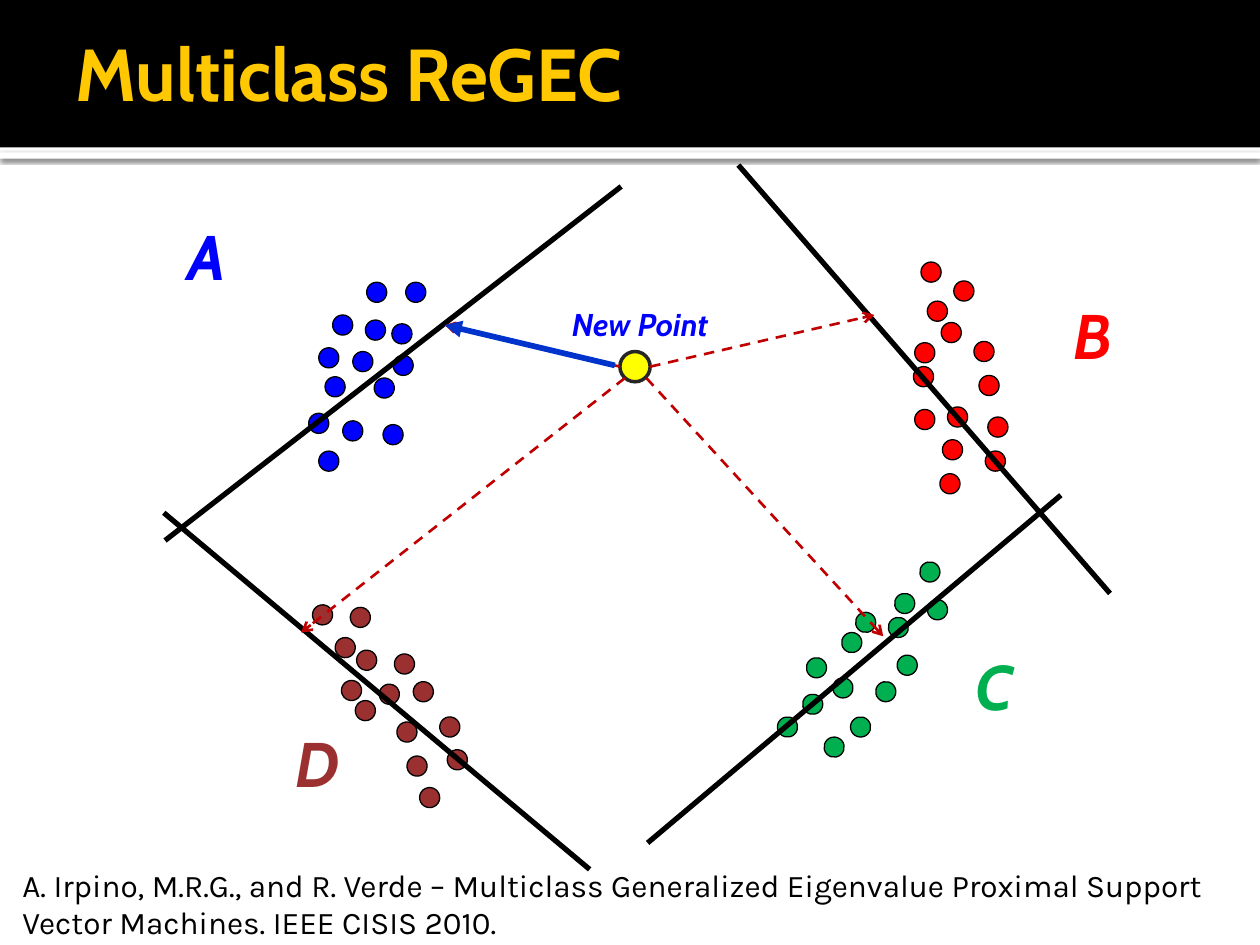
"""Build the Multiclass ReGEC slide: four point classes, their planes and a new point."""
from lxml import etree
from pptx import Presentation
from pptx.dml.color import RGBColor
from pptx.enum import dml, shapes, text
from pptx.oxml import ns, parse_xml
from pptx.util import Inches, Pt

HUES = {
    "black": "000000", "white": "FFFFFF", "gold": "FFC800", "blue": "0000FF",
    "red": "FF0000", "brown": "9A3130", "green": "00B050", "dark": "C00000",
    "yellow": "FFFF00", "gray": "262626", "royal": "0033CC",
}
RGB = {name: RGBColor.from_string(code) for name, code in HUES.items()}

deck = Presentation()
deck.slide_width, deck.slide_height = Inches(10), Inches(7.5)
slide = deck.slides.add_slide(deck.slide_layouts[6])
items = slide.shapes


def label(words, box, size, hue, font="Cabin", bold=True, slant=False, wrap=False):
    note = items.add_textbox(*map(Inches, box))
    frame = note.text_frame
    frame.word_wrap = wrap
    line = frame.paragraphs[0]
    line.text = words
    face = line.font
    face.name, face.size, face.bold, face.italic = font, Pt(size), bold, slant
    face.color.rgb = RGB[hue]
    return frame


def stroke(start, end, hue, width, head=None, dash=False):
    line = items.add_connector(
        shapes.MSO_CONNECTOR.STRAIGHT, *map(Inches, start + end))
    line.line.color.rgb = RGB[hue]
    line.line.width = Pt(width)
    if dash:
        line.line.dash_style = dml.MSO_LINE.DASH
    if head:
        etree.SubElement(line.line._get_or_add_ln(), ns.qn("a:tailEnd"), type=head)
    etree.SubElement(line._element.spPr, ns.qn("a:effectLst"))


for top, height, hue in [(1.21, 0.05, "white"), (0, 1.17, "black")]:
    bar = items.add_shape(
        shapes.MSO_SHAPE.RECTANGLE, 0, Inches(top), Inches(10), Inches(height))
    bar.shadow.inherit = False
    bar.fill.solid()
    bar.fill.fore_color.rgb = RGB[hue]
    bar.line.fill.background()
    if hue == "white":
        glow = bar._element.spPr.find(ns.qn("a:effectLst"))
        glow.append(parse_xml(
            f'<a:outerShdw {ns.nsdecls("a")} blurRad="{Pt(2.5)}" dist="{Pt(0.8)}" '
            f'dir="5400000" algn="tl" rotWithShape="0"><a:srgbClr val="{HUES["black"]}">'
            '<a:alpha val="60000"/></a:srgbClr></a:outerShdw>'))

title = label("Multiclass ReGEC", (0.5, 0.17, 9, 1.37), 42, "gold", wrap=True)
title.margin_right = Inches(0.05)
title.vertical_anchor = text.MSO_ANCHOR.TOP

groups = [
    ("A", (1.39, 1.68, 0.86, 0.71), "blue", 17.9, [
        (3.11, 2.57), (2.97, 3), (2.72, 3.34), (2.8, 2.79), (2.91, 2.24),
        (2.9, 2.54), (3.22, 2.24), (2.45, 3.28), (3.12, 2.82), (2.53, 3.58),
        (2.58, 2.99), (2.53, 2.76), (2.64, 2.5), (3.04, 3.37)]),
    ("D", (2.25, 5.7, 0.52, 0.71), "brown", 334.6, [
        (2.83, 5.16), (3.28, 5.41), (3.15, 5.73), (3.55, 5.95), (2.82, 5.56),
        (3.13, 5.19), (3.49, 5.69), (3.33, 6.25), (3.23, 6), (2.71, 5.4),
        (3.01, 5.43), (2.48, 4.8), (2.78, 4.82), (2.66, 5.06)]),
    ("C", (7.64, 5.09, 0.46, 0.71), "green", 47.2, [
        (7.05, 4.9), (6.95, 5.41), (6.61, 5.38), (6.54, 5.85), (6.68, 5.02),
        (7.12, 5.2), (6.75, 5.69), (6.17, 5.69), (6.37, 5.51), (6.79, 4.86),
        (6.4, 5.22), (7.3, 4.46), (7.36, 4.76), (7.1, 4.71)]),
    ("B", (8.42, 2.3, 0.51, 0.71), "red", 0, [
        (7.47, 2.56), (7.77, 2.98), (7.52, 3.23), (7.82, 3.58), (7.25, 2.91),
        (7.73, 2.71), (7.84, 3.31), (7.46, 3.76), (7.48, 3.49), (7.26, 2.72),
        (7.26, 3.25), (7.31, 2.08), (7.57, 2.23), (7.36, 2.39)]),
]
dots = [(spot, 0.16, hue, "black", 0.75, turn)
        for _, _, hue, turn, spots in groups for spot in spots]
dots.append(((4.92, 2.79), 0.24, "yellow", "gray", 2, 0))
for (left, top), size, hue, edge, width, turn in dots:
    dot = items.add_shape(
        shapes.MSO_SHAPE.OVAL, *map(Inches, (left, top, size, size)))
    dot.shadow.inherit = False
    dot.rotation = turn
    dot.fill.solid()
    dot.fill.fore_color.rgb = RGB[hue]
    dot.line.color.rgb = RGB[edge]
    dot.line.width = Pt(width)

for name, box, hue, _, _ in groups:
    label(name, box, 36, hue, slant=True, wrap=name == "A")

planes = [
    ((4.93, 1.48), (1.31, 4.29)), ((4.68, 6.9), (1.3, 4.07)),
    ((5.86, 1.31), (8.81, 4.71)), ((8.42, 3.93), (5.14, 6.69)),
]
for start, end in planes:
    stroke(start, end, "black", 3)

rays = [
    ((5.16, 2.91), (6.94, 2.5)), ((4.92, 2.91), (3.53, 2.58)),
    ((5.13, 3), (7.01, 5.05)), ((4.96, 3), (2.39, 5.02)),
]
for start, end in rays:
    stroke(start, end, "dark", 1.5, "arrow", dash=True)
stroke((4.88, 2.9), (3.53, 2.58), "royal", 3.25, "triangle")

label("New Point", (4.44, 2.37, 1.35, 0.4), 18, "blue", slant=True)
label("A. Irpino, M.R.G., and R. Verde – Multiclass Generalized Eigenvalue "
      "Proximal Support Vector Machines. IEEE CISIS 2010.",
      (0.08, 6.82, 9.8, 0.71), 18, "black", "Karla", bold=False, wrap=True)

deck.save("out.pptx")
